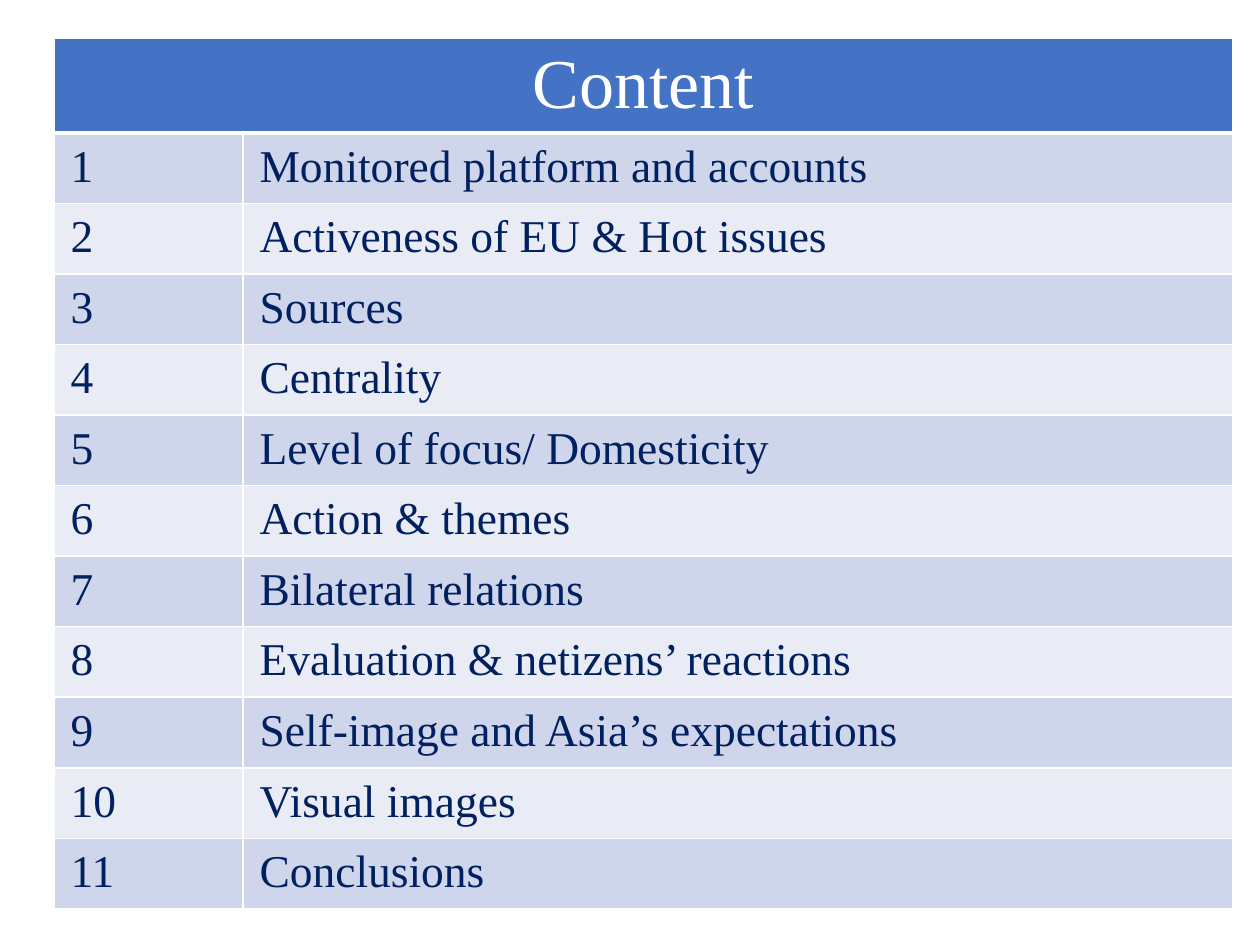
from dataclasses import dataclass
from lxml.etree import SubElement
from pptx import Presentation
from pptx.dml.color import RGBColor
from pptx.enum.text import PP_ALIGN
from pptx.oxml.ns import qn
from pptx.util import Inches, Pt


@dataclass(frozen=True)
class Theme:
    font: str = "Times New Roman"
    head: str = "4472C4"
    bands: tuple = ("CFD5EA", "E9EBF5")
    ink: str = "002060"
    white: str = "FFFFFF"
    big: int = 40
    body: int = 26
    thin: int = 1
    thick: int = 3


TITLE = "Content"
TOPICS = [
    "Monitored platform and accounts",
    "Activeness of EU & Hot issues",
    "Sources",
    "Centrality",
    "Level of focus/ Domesticity",
    "Action & themes",
    "Bilateral relations",
    "Evaluation & netizens’ reactions",
    "Self-image and Asia’s expectations",
    "Visual images",
    "Conclusions",
]


class Deck:
    def __init__(self, theme):
        self.theme = theme
        self.file = Presentation()
        self.file.slide_width = Inches(10)
        self.file.slide_height = Inches(7.5)
        self.slide = self.file.slides.add_slide(self.file.slide_layouts[6])

    def edge(self, cell, side, width):
        props = cell._tc.get_or_add_tcPr()
        line = SubElement(props, qn(f"a:ln{side}"), w=str(Pt(width)))
        fill = SubElement(line, qn("a:solidFill"))
        SubElement(fill, qn("a:srgbClr"), val=self.theme.white)

    def cell(self, cell, text, fill, ink, size, align, top, base):
        thin = self.theme.thin
        for side, width in zip("LRTB", (thin, thin, top, base)):
            self.edge(cell, side, width)
        cell.fill.solid()
        cell.fill.fore_color.rgb = RGBColor.from_string(fill)
        cell.margin_left = cell.margin_right = Inches(0.13)
        cell.margin_top = cell.margin_bottom = Inches(0.07)
        cell.text_frame.text = text
        line = cell.text_frame.paragraphs[0]
        line.alignment = align
        line.font.size = Pt(size)
        for run in line.runs:
            run.font.name = self.theme.font
            run.font.size = Pt(size)
            run.font.bold = False
            run.font.color.rgb = RGBColor.from_string(ink)

    def agenda(self, title, topics):
        look = self.theme
        widths = (1.5, 7.85)
        heights = [0.72] + [0.56] * len(topics)
        grid = self.slide.shapes.add_table(
            len(heights), len(widths), Inches(0.43), Inches(0.3),
            Inches(sum(widths)), Inches(sum(heights))).table
        for col, width in zip(grid.columns, widths):
            col.width = Inches(width)
        for row, height in zip(grid.rows, heights):
            row.height = Inches(height)
        grid.cell(0, 0).merge(grid.cell(0, 1))
        for col, text in enumerate((title, "")):
            self.cell(grid.cell(0, col), text, look.head, look.white,
                      look.big, PP_ALIGN.CENTER, look.thin, look.thick)
        for row, topic in enumerate(topics, 1):
            fill = look.bands[(row - 1) % 2]
            top = look.thick if row == 1 else look.thin
            for col, text in enumerate((str(row), topic)):
                self.cell(grid.cell(row, col), text, fill, look.ink,
                          look.body, PP_ALIGN.LEFT, top, look.thin)


def main():
    deck = Deck(Theme())
    deck.agenda(TITLE, TOPICS)
    deck.file.save("out.pptx")


if __name__ == "__main__":
    main()
